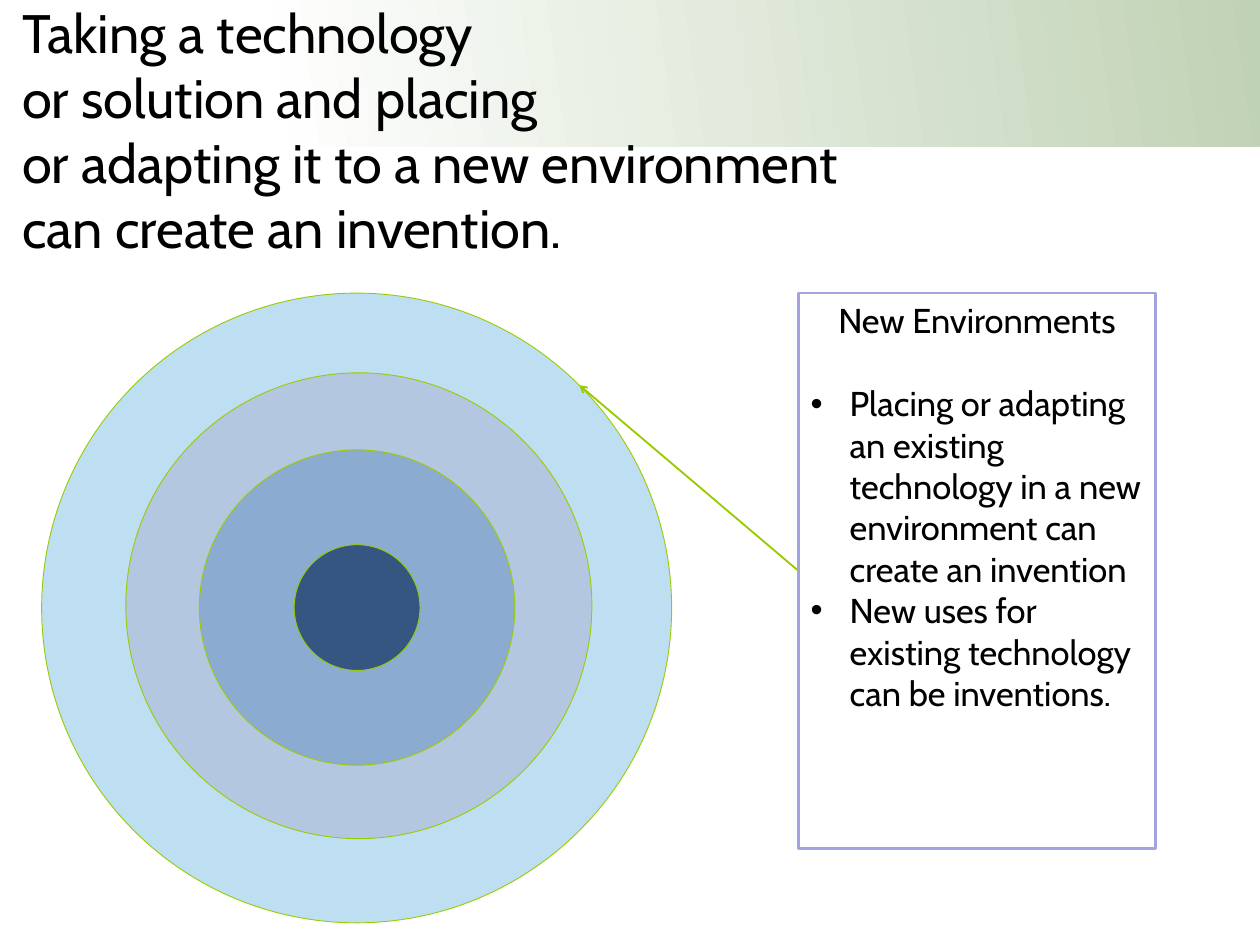
from lxml import etree
from pptx import Presentation
from pptx.dml.color import RGBColor
from pptx.enum.shapes import MSO_CONNECTOR, MSO_SHAPE
from pptx.enum.text import MSO_ANCHOR, PP_ALIGN
from pptx.oxml.ns import qn
from pptx.util import Inches, Pt

RECT, OVAL = MSO_SHAPE.RECTANGLE, MSO_SHAPE.OVAL
LINE = MSO_CONNECTOR.STRAIGHT
TOP = MSO_ANCHOR.TOP
LEFT, CENTER = PP_ALIGN.LEFT, PP_ALIGN.CENTER

WHITE = RGBColor(0xFF, 0xFF, 0xFF)
BLACK = RGBColor(0x00, 0x00, 0x00)
SAGE = RGBColor(0xC0, 0xD2, 0xB5)
LIME = RGBColor(0x99, 0xCC, 0x00)
LILAC = RGBColor(0xA3, 0xA3, 0xE0)
SKY = RGBColor(0xBE, 0xDF, 0xF2)
MIST = RGBColor(0xB3, 0xC7, 0xE0)
STEEL = RGBColor(0x8C, 0xAB, 0xD0)
NAVY = RGBColor(0x35, 0x56, 0x80)

FONT = "Cabin"
HANG = Inches(0.44)

# Each ring: offset from the left and top of the target, diameter, fill
RINGS = [
    (0, 0, 7.11, SKY),
    (0.95, 0.9, 5.26, MIST),
    (1.78, 1.77, 3.56, STEEL),
    (2.85, 2.84, 1.42, NAVY),
]
TITLE = "\v".join([
    "Taking a technology",
    "or solution and placing",
    "or adapting it to a new environment",
    "can create an invention.",
])
POINTS = [
    "Placing or adapting an existing technology in a new environment "
    "can create an invention",
    "New uses for existing technology can be inventions.",
]


def add_shape(slide, kind, box, fill=None, line=None, width=0.75):
    shape = slide.shapes.add_shape(kind, *map(Inches, box))
    shape.shadow.inherit = False
    if fill is None:
        shape.fill.background()
    else:
        shape.fill.solid()
        shape.fill.fore_color.rgb = fill
    if line is None:
        shape.line.fill.background()
    else:
        shape.line.color.rgb = line
        shape.line.width = Pt(width)
    return shape


def set_frame(frame):
    frame.word_wrap = True
    frame.vertical_anchor = TOP
    frame.margin_left = frame.margin_right = Inches(0.14)
    frame.margin_top = frame.margin_bottom = Inches(0.07)


def add_text(frame, text, size=28, align=LEFT, bullet=False, before=0):
    """Fill the empty first paragraph, or append a new one."""
    para = frame.paragraphs[0]
    if para.runs:
        para = frame.add_paragraph()
    if bullet:
        props = para._p.get_or_add_pPr()
        props.set("marL", str(HANG))
        props.set("indent", str(-HANG))
        etree.SubElement(props, qn("a:buFont"), typeface="Arial")
        etree.SubElement(props, qn("a:buChar"), char="•")
    para.alignment = align
    if before:
        para.space_before = Pt(before)
    para.text = text
    for run in para.runs:
        run.font.name = FONT
        run.font.size = Pt(size)
        run.font.color.rgb = BLACK


def add_band(slide, box):
    fill = add_shape(slide, RECT, box).fill
    fill.gradient()
    fill.gradient_angle = 8
    for stop, color in zip(fill.gradient_stops, (WHITE, SAGE)):
        stop.color.rgb = color


def add_title(slide, box):
    frame = slide.shapes.add_textbox(*map(Inches, box)).text_frame
    set_frame(frame)
    add_text(frame, TITLE, size=44)


def add_target(slide, left, top):
    for dx, dy, size, fill in RINGS:
        add_shape(slide, OVAL, (left + dx, top + dy, size, size), fill, LIME)


def add_arrow(slide, start, end):
    arrow = slide.shapes.add_connector(LINE, *map(Inches, start + end))
    arrow.line.color.rgb = LIME
    arrow.line.width = Pt(1.5)
    etree.SubElement(arrow.line._get_or_add_ln(), qn("a:tailEnd"), type="arrow")
    etree.SubElement(arrow._element.spPr, qn("a:effectLst"))


def add_panel(slide, box):
    frame = add_shape(slide, RECT, box, line=LILAC, width=2.25).text_frame
    set_frame(frame)
    add_text(frame, "New Environments", align=CENTER)
    for i, point in enumerate(POINTS):
        add_text(frame, point, bullet=True, before=0 if i else 34)


def main():
    deck = Presentation()
    deck.slide_width, deck.slide_height = Inches(14.22), Inches(10.67)
    slide = deck.slides.add_slide(deck.slide_layouts[6])
    left, top, width, height = panel = (9.01, 3.31, 4.03, 6.27)
    add_band(slide, (2.99, 0, 11.23, 1.65))
    add_title(slide, (0.11, -0.08, 11.44, 3.61))
    add_target(slide, 0.47, top)
    add_arrow(slide, (left, top + height / 2), (6.54, 4.35))
    add_panel(slide, panel)
    deck.save("out.pptx")


if __name__ == "__main__":
    main()
